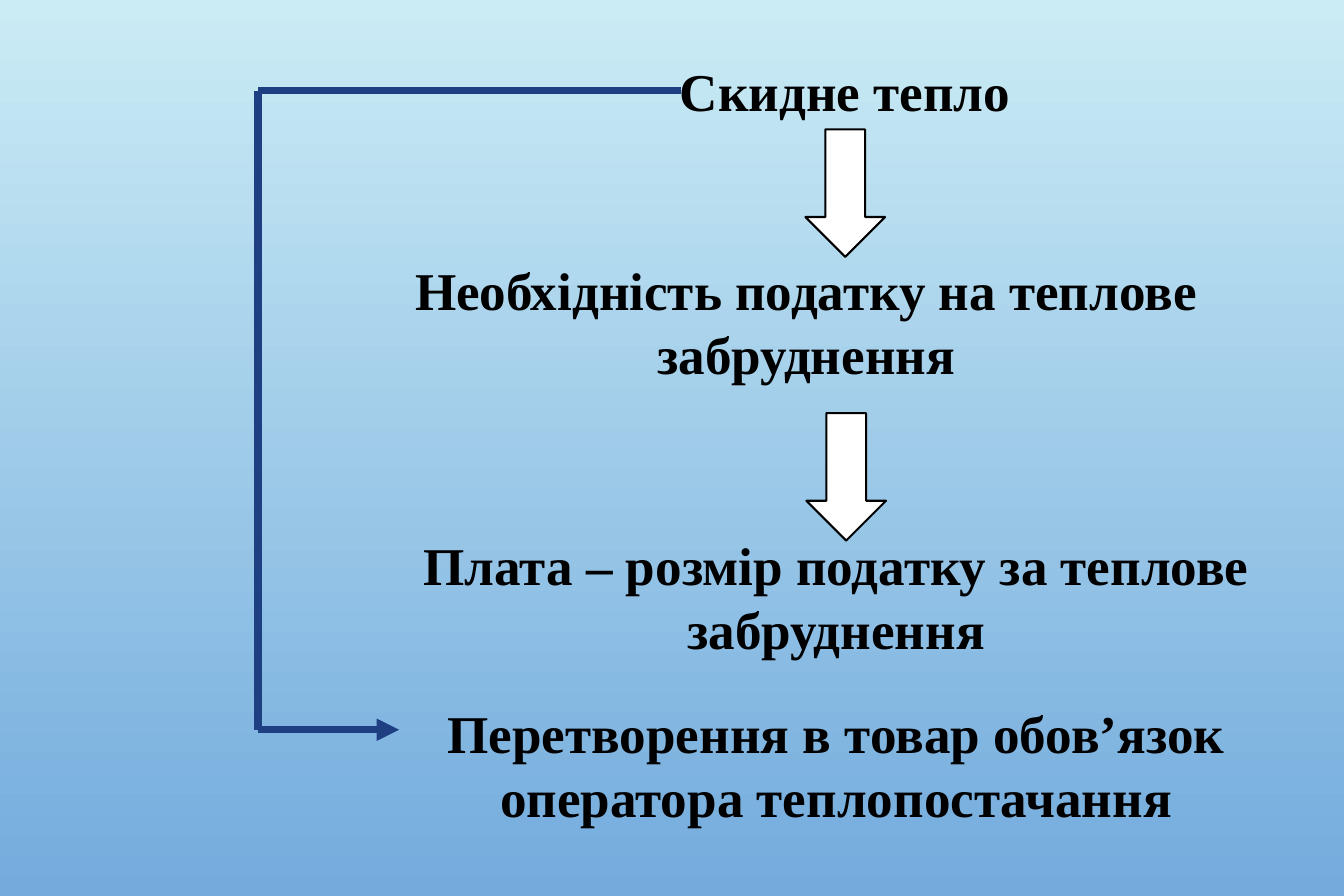
from dataclasses import dataclass
from itertools import pairwise

from lxml.etree import SubElement
from pptx import Presentation
from pptx.dml.color import RGBColor
from pptx.enum.shapes import MSO_CONNECTOR as Connector, MSO_SHAPE as Shape
from pptx.enum.text import MSO_AUTO_SIZE as AutoSize, PP_ALIGN as Align
from pptx.oxml.ns import qn
from pptx.util import Emu, Pt

# Content: (text, left, top, width, height) in px, 120 px to the inch
STATEMENTS = [
    ("Скидне тепло", 655, 53, 388, 77),
    ("Необхідність податку на теплове забруднення", 304, 253, 1012, 142),
    ("Плата – розмір податку за теплове забруднення", 364, 529, 952, 142),
    ("Перетворення в товар обов’язок оператора теплопостачання", 364, 698, 952, 142),
]
DOWN_ARROWS = [(809, 130), (810, 415)]
ARROW_SIZE = (80, 128)
BYPASS_ROUTE = [(684, 91), (259, 91), (259, 733), (401, 733)]
SLIDE_SIZE = (1350, 900)


@dataclass(frozen=True)
class Theme:
    font: str = "Times New Roman"
    text_size: float = 32
    text: str = "000000"
    background: tuple = ("CBECF5", "73ABDD")
    arrow_fill: str = "FFFFFF"
    arrow_line: str = "000000"
    arrow_line_width: float = 1.25
    route: str = "1F3F83"
    route_width: float = 4.5


THEME = Theme()


def px(*lengths):
    return [Emu(length * 7620) for length in lengths]


def color(code):
    return RGBColor.from_string(code)


def paint_background(slide):
    fill = slide.background.fill
    fill.gradient()
    fill.gradient_angle = 270
    for stop, code in zip(fill.gradient_stops, THEME.background):
        stop.color.rgb = color(code)


def add_statement(slide, text, *box):
    frame = slide.shapes.add_textbox(*px(*box)).text_frame
    frame.word_wrap = True
    frame.auto_size = AutoSize.SHAPE_TO_FIT_TEXT
    paragraph = frame.paragraphs[0]
    paragraph.text = text
    paragraph.alignment = Align.CENTER
    font = paragraph.font
    font.name, font.size, font.bold = THEME.font, Pt(THEME.text_size), True
    font.color.rgb = color(THEME.text)


def add_down_arrow(slide, left, top):
    shape = slide.shapes.add_shape(Shape.DOWN_ARROW, *px(left, top, *ARROW_SIZE))
    shape.shadow.inherit = False
    shape.fill.solid()
    shape.fill.fore_color.rgb = color(THEME.arrow_fill)
    shape.line.color.rgb = color(THEME.arrow_line)
    shape.line.width = Pt(THEME.arrow_line_width)


def add_route_line(slide, start, end, arrowhead):
    connector = slide.shapes.add_connector(Connector.STRAIGHT, *px(*start, *end))
    connector.line.color.rgb = color(THEME.route)
    connector.line.width = Pt(THEME.route_width)
    properties = connector._element.spPr
    if arrowhead:
        SubElement(properties.find(qn("a:ln")), qn("a:tailEnd"), type="triangle")
    SubElement(properties, qn("a:effectLst"))


def main():
    presentation = Presentation()
    presentation.slide_width, presentation.slide_height = px(*SLIDE_SIZE)
    slide = presentation.slides.add_slide(presentation.slide_layouts[6])
    paint_background(slide)

    # Chain of statements
    for statement in STATEMENTS:
        add_statement(slide, *statement)
    for position in DOWN_ARROWS:
        add_down_arrow(slide, *position)

    # Route from the first statement to the last
    for start, end in pairwise(BYPASS_ROUTE):
        add_route_line(slide, start, end, arrowhead=end == BYPASS_ROUTE[-1])

    presentation.save("out.pptx")


if __name__ == "__main__":
    main()
